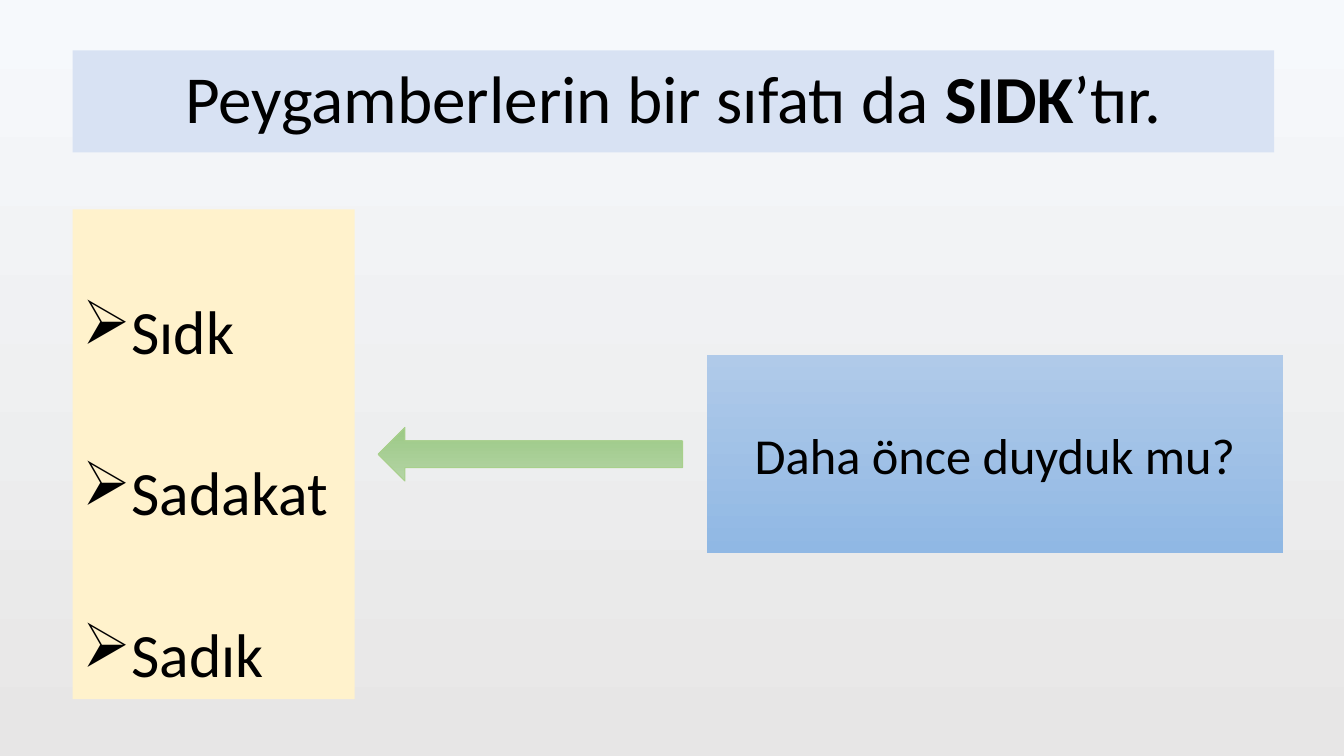
from lxml.etree import SubElement
from pptx import Presentation
from pptx.dml.color import RGBColor
from pptx.enum.shapes import MSO_SHAPE
from pptx.enum.text import MSO_ANCHOR, MSO_AUTO_SIZE, PP_ALIGN
from pptx.oxml.ns import qn
from pptx.util import Cm, Pt

FONT = "Calibri"
BULLET_FONT = "Wingdings"
ARROWHEAD_BULLET = "Ø"  # drawn as an arrowhead in the bullet font
BLACK = "000000"


def color(hex_string):
    return RGBColor.from_string(hex_string)


def fill_solid(shape, hex_string):
    shape.fill.solid()
    shape.fill.fore_color.rgb = color(hex_string)


def fill_gradient(fill, top, bottom):
    fill.gradient()
    fill.gradient_angle = 270
    for stop, hex_string in zip(fill.gradient_stops, (top, bottom)):
        stop.color.rgb = color(hex_string)


def set_frame(shape):
    frame = shape.text_frame
    frame.word_wrap = True
    frame.auto_size = MSO_AUTO_SIZE.NONE
    frame.vertical_anchor = MSO_ANCHOR.MIDDLE
    return frame


def format_paragraph(paragraph, size, alignment, line_spacing=1.0):
    paragraph.alignment = alignment
    paragraph.line_spacing = line_spacing
    paragraph.font.name = FONT
    paragraph.font.size = Pt(size)
    paragraph.font.color.rgb = color(BLACK)


def add_bullet(paragraph):
    properties = paragraph._p.get_or_add_pPr()
    properties.set("marL", str(Cm(0.64)))
    properties.set("indent", str(Cm(-0.79)))
    bullet_color = SubElement(properties, qn("a:buClr"))
    SubElement(bullet_color, qn("a:srgbClr")).set("val", BLACK)
    bullet_font = SubElement(properties, qn("a:buFont"))
    bullet_font.set("typeface", BULLET_FONT)
    bullet_font.set("pitchFamily", "2")
    bullet_font.set("charset", "2")
    SubElement(properties, qn("a:buChar")).set("char", ARROWHEAD_BULLET)


def format_title(title, parts):
    title.left, title.top, title.width, title.height = Cm(1.83), Cm(1.27), Cm(30.28), Cm(2.57)
    fill_solid(title, "D8E2F3")
    paragraph = set_frame(title).paragraphs[0]
    for text, bold in parts:
        run = paragraph.add_run()
        run.text = text
        run.font.bold = bold
    format_paragraph(paragraph, 48, PP_ALIGN.CENTER, 0.9)


def add_word_list(slide, words):
    box = slide.shapes.add_textbox(Cm(1.83), Cm(5.28), Cm(7.11), Cm(12.34))
    fill_solid(box, "FFF2CC")
    frame = set_frame(box)
    for index, word in enumerate(words):
        paragraph = frame.add_paragraph() if index else frame.paragraphs[0]
        paragraph.text = word
        add_bullet(paragraph)
        format_paragraph(paragraph, 44, PP_ALIGN.LEFT, 2.0)
        if index:
            paragraph.space_before = Pt(10)


def add_gradient_shape(slide, kind, left, top, width, height, colors):
    shape = slide.shapes.add_shape(kind, Cm(left), Cm(top), Cm(width), Cm(height))
    shape.shadow.inherit = False
    fill_gradient(shape.fill, *colors)
    shape.line.fill.background()
    return shape


def main():
    presentation = Presentation()
    presentation.slide_width, presentation.slide_height = Cm(33.87), Cm(19.05)
    slide = presentation.slides.add_slide(presentation.slide_layouts[5])
    fill_gradient(slide.background.fill, "F6F9FC", "E7E6E6")

    # Title and list of words
    format_title(slide.shapes.title, [
        ("Peygamberlerin bir sıfatı da ", False), ("SIDK", True), ("’tır.", False)])
    add_word_list(slide, ["Sıdk", "Sadakat", "Sadık"])

    # Question box
    question = add_gradient_shape(
        slide, MSO_SHAPE.RECTANGLE, 17.81, 8.94, 14.53, 5, ("B0CAE9", "90B8E4"))
    paragraph = set_frame(question).paragraphs[0]
    paragraph.text = "Daha önce duyduk mu?"
    format_paragraph(paragraph, 36, PP_ALIGN.CENTER)

    # Arrow from the question to the words
    arrow = add_gradient_shape(
        slide, MSO_SHAPE.RIGHT_ARROW, 9.53, 10.77, 7.67, 1.35, ("B4D4A5", "9BC985"))
    arrow.rotation = 180
    arrow.line.color.rgb = color("A8D08C")
    arrow.line.width = Pt(0.75)

    presentation.save("out.pptx")


if __name__ == "__main__":
    main()
